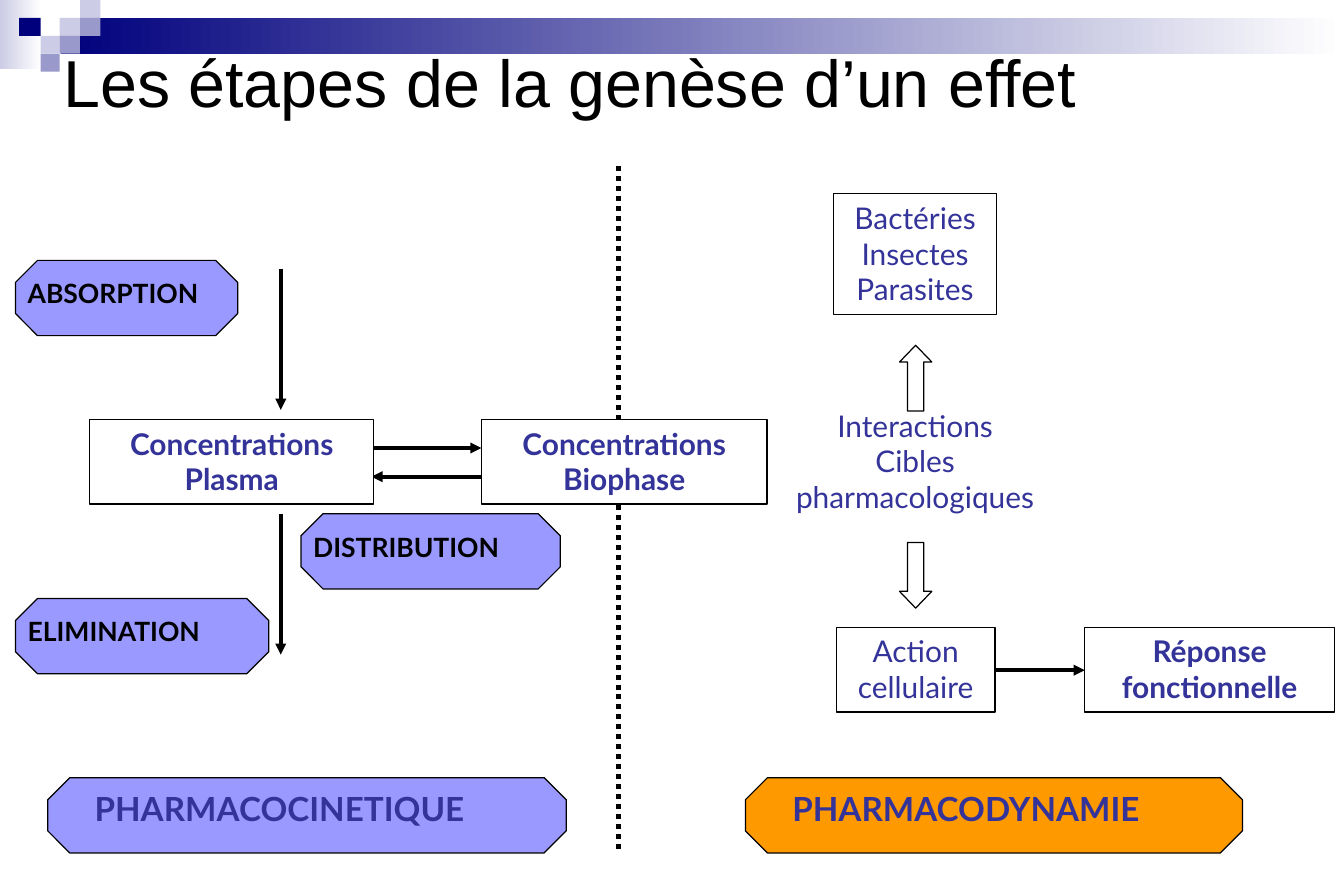
import lxml.etree
import pptx
import pptx.dml.color
import pptx.enum.dml
import pptx.enum.shapes
import pptx.enum.text
import pptx.oxml.ns
import pptx.util

COLUMNS, ROWS = 112.5, 75
SHAPE = pptx.enum.shapes.MSO_SHAPE
ALIGN = pptx.enum.text.PP_ALIGN
ANCHOR = pptx.enum.text.MSO_ANCHOR
BLACK, WHITE, INDIGO, LILAC, ORANGE = "000000", "FFFFFF", "333399", "9999FF", "FF9900"
NAVY, PALE, GREY_BLUE = "00007D", "CCCCE6", "9999CC"


def rgb(value):
    return pptx.dml.color.RGBColor.from_string(value)


class Diagram:
    """Draws styled elements on one slide, measured in grid columns and rows."""

    def __init__(self, deck):
        self.column = deck.slide_width / COLUMNS
        self.row = deck.slide_height / ROWS
        self.slide = deck.slides.add_slide(deck.slide_layouts[5])
        self.shapes = self.slide.shapes
        self.font = "Lato"

    def place(self, left, top, width, height):
        return (round(left * self.column), round(top * self.row),
                round(width * self.column), round(height * self.row))

    def set_lines(self, frame, lines, size, color, bold=False, align=ALIGN.CENTER, font=None):
        frame.word_wrap = True
        frame.text = "\n".join(lines)
        for paragraph in frame.paragraphs:
            paragraph.alignment = align
            for run in paragraph.runs:
                run.font.name = font or self.font
                run.font.size = pptx.util.Pt(size)
                run.font.bold = bold
                run.font.color.rgb = rgb(color)

    def title(self, wording, area):
        heading = self.shapes.title
        heading.left, heading.top, heading.width, heading.height = self.place(*area)
        frame = heading.text_frame
        frame.auto_size = pptx.enum.text.MSO_AUTO_SIZE.NONE
        frame.vertical_anchor = ANCHOR.MIDDLE
        self.set_lines(frame, [wording], 40, BLACK, align=ALIGN.LEFT, font="Arial")

    def shape(self, kind, area, fill=None, outline=BLACK):
        form = self.shapes.add_shape(kind, *self.place(*area))
        form.shadow.inherit = False
        if fill:
            form.fill.solid()
            form.fill.fore_color.rgb = rgb(fill)
        else:
            form.fill.background()
        if outline:
            form.line.color.rgb = rgb(outline)
            form.line.width = pptx.util.Pt(0.75)
        else:
            form.line.fill.background()
        return form

    def fade(self, area, start):
        band = self.shape(SHAPE.RECTANGLE, area, outline=None)
        band.fill.gradient()
        band.fill.gradient_angle = 0
        for stop, color, position in zip(band.fill.gradient_stops, (start, WHITE), (0, 1)):
            stop.color.rgb = rgb(color)
            stop.position = position

    def step(self, area, lines, bold=False, outline=BLACK):
        box = self.shape(SHAPE.RECTANGLE, area, WHITE if outline else None, outline)
        box.text_frame.vertical_anchor = ANCHOR.TOP
        self.set_lines(box.text_frame, lines, 18, INDIGO, bold)

    def phase(self, area, name, fill, size, color, indent, drop):
        badge = self.shape(SHAPE.OCTAGON, area, fill)
        badge.adjustments[0] = 0.293
        frame = badge.text_frame
        frame.vertical_anchor = ANCHOR.TOP
        frame.margin_left = round(indent * self.column)
        frame.margin_top = round(drop * self.row)
        self.set_lines(frame, [name], size, color, True, ALIGN.LEFT)

    def block_arrow(self, kind, area):
        arrow = self.shape(kind, area)
        arrow.adjustments[0] = 0.5
        arrow.adjustments[1] = 0.518

    def line(self, start, end, weight=2.25, dotted=False):
        ends = self.place(*start, *end)
        link = self.shapes.add_connector(pptx.enum.shapes.MSO_CONNECTOR.STRAIGHT, *ends)
        link.line.color.rgb = rgb(BLACK)
        link.line.width = pptx.util.Pt(weight)
        qn = pptx.oxml.ns.qn
        properties = link._element.spPr
        if dotted:
            link.line.dash_style = pptx.enum.dml.MSO_LINE.ROUND_DOT
        else:
            lxml.etree.SubElement(properties.find(qn("a:ln")), qn("a:tailEnd"), type="triangle")
        lxml.etree.SubElement(properties, qn("a:effectLst"))


def main():
    deck = pptx.Presentation()
    deck.slide_width = pptx.util.Inches(11.25)
    deck.slide_height = pptx.util.Inches(7.5)
    diagram = Diagram(deck)

    diagram.fade((0, 0, 3.5, 5.8), PALE)
    diagram.fade((5.1, 1.5, 107.4, 3), NAVY)
    edges = [1.6, 3.4, 5, 6.7, 8.4]
    tile_height = 1.5
    for column, row, color in [(2, 1, PALE), (3, 0, PALE), (3, 1, GREY_BLUE), (1, 2, PALE),
                               (0, 1, NAVY), (2, 2, GREY_BLUE), (1, 3, GREY_BLUE)]:
        left, right = edges[column:column + 2]
        area = (left, row * tile_height, right - left, tile_height)
        diagram.shape(SHAPE.RECTANGLE, area, color, None)
    diagram.title("Les étapes de la genèse d’un effet", (4.3, 3.6, 91.8, 6.3))

    diagram.line((51.8, 13.9), (51.8, 71.4), 3, dotted=True)
    for start, end in [((31.1, 37.5), (40.3, 37.5)), ((40.3, 39.9), (31.1, 39.9)),
                       ((23.5, 22.5), (23.5, 34.3)), ((23.5, 43), (23.5, 54.8)),
                       ((80.2, 56.1), (90.8, 56.1))]:
        diagram.line(start, end)

    badge_height = 6.3
    for left, top, width, name in [(1.3, 21.8, 18.6, "ABSORPTION"),
                                   (1.3, 50.1, 21.2, "ELIMINATION"),
                                   (25.2, 43, 21.7, "DISTRIBUTION")]:
        diagram.phase((left, top, width, badge_height), name, LILAC, 16, BLACK, 0.1, 0.5)
    for left, width, name, fill in [(4, 43.4, "PHARMACOCINETIQUE", LILAC),
                                    (62.4, 41.6, "PHARMACODYNAMIE", ORANGE)]:
        diagram.phase((left, 65.1, width, badge_height), name, fill, 20, INDIGO, 3, 0)

    diagram.step((7.5, 35.1, 23.8, 7.1), ["Concentrations", "Plasma"], bold=True)
    diagram.step((40.3, 35.1, 23.9, 7.1), ["Concentrations", "Biophase"], bold=True)
    diagram.step((90.8, 52.5, 20.9, 7.1), ["Réponse", "fonctionnelle"], bold=True)
    diagram.step((69.8, 16.2, 13.6, 10.1), ["Bactéries", "Insectes", "Parasites"])
    diagram.step((70, 52.5, 13.3, 7.1), ["Action", "cellulaire"])
    diagram.step((64.2, 33.6, 24.8, 10), ["Interactions", "Cibles", "pharmacologiques"],
                 outline=None)
    diagram.block_arrow(SHAPE.UP_ARROW, (75.3, 28.9, 2.7, 5.5))
    diagram.block_arrow(SHAPE.DOWN_ARROW, (75.3, 45.4, 2.7, 5.5))

    deck.save("out.pptx")


if __name__ == "__main__":
    main()
